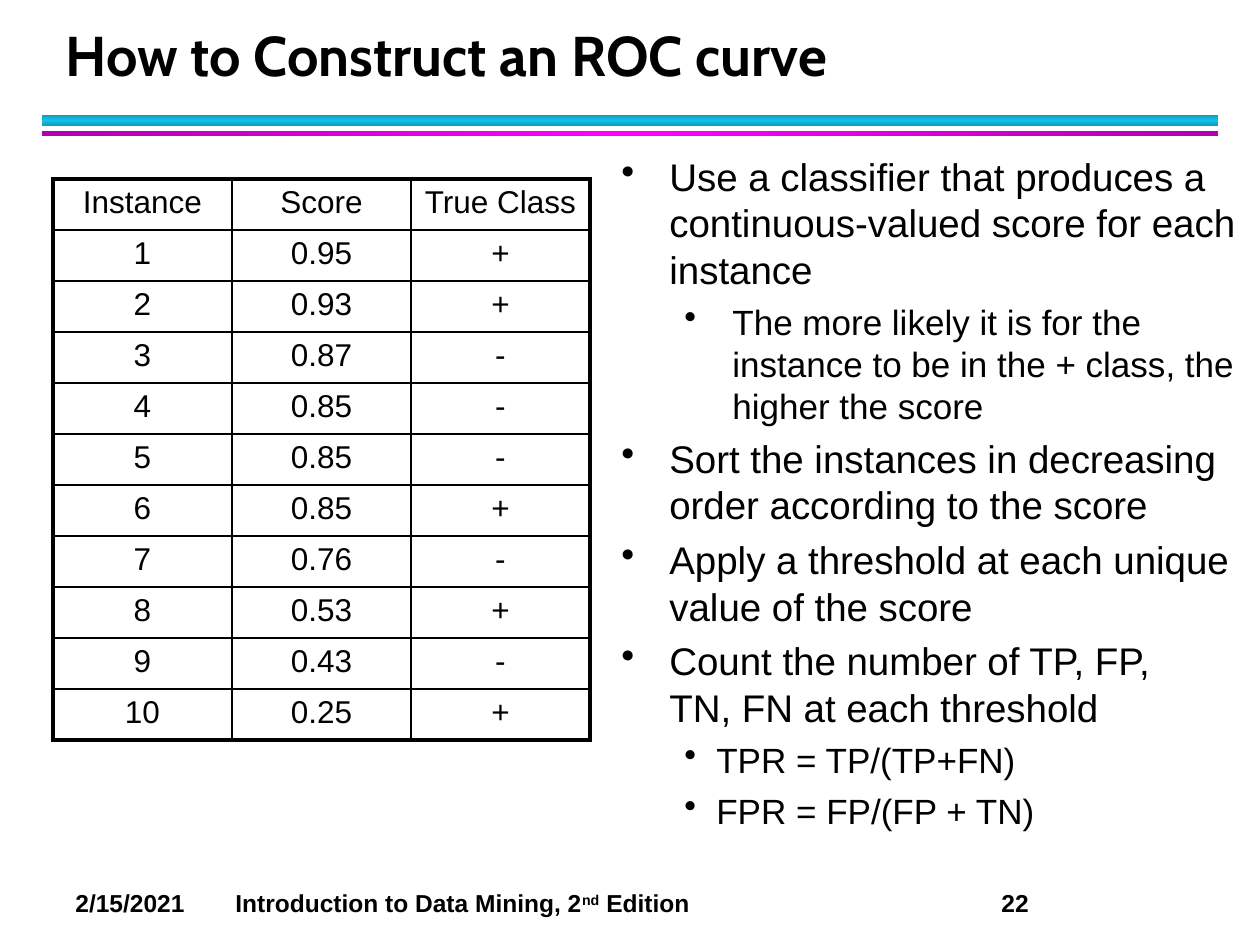
"""Build the slide on constructing an ROC curve."""
from lxml import etree
from pptx import Presentation
from pptx.dml.color import RGBColor
from pptx.enum.shapes import MSO_SHAPE
from pptx.enum.text import MSO_ANCHOR, PP_ALIGN
from pptx.oxml.ns import qn
from pptx.util import Emu, Pt

RECTANGLE = MSO_SHAPE.RECTANGLE
BOTTOM = MSO_ANCHOR.BOTTOM
CENTER = PP_ALIGN.CENTER
EMU_PER_PX = 914400 / 126

COLORS = {
    "ink": "000000",
    "paper": "FFFFFF",
    "cyan": "12C2E9",
    "cyan_edge": "0E9BBA",
    "magenta": "FF00FF",
    "magenta_edge": "B200B2",
}
HEADERS = ("Instance", "Score", "True Class")
SCORES = ("0.95", "0.93", "0.87", "0.85", "0.85", "0.85", "0.76", "0.53", "0.43", "0.25")
CLASSES = "++---+-+-+"
BULLETS = (
    (0, 48, 48, "Use a classifier that produces a continuous-valued score for each instance"),
    (1, 111, 48, "The more likely it is for the instance to be in the + class, the higher the score"),
    (0, 48, 48, "Sort the instances in decreasing order according to the score"),
    (0, 48, 48, "Apply a threshold at each unique value of the score"),
    (0, 48, 48, "Count the number of TP, FP,\vTN, FN at each threshold"),
    (1, 95, 32, "TPR = TP/(TP+FN)"),
    (1, 95, 32, "FPR = FP/(FP + TN)"),
)
LEVEL_SIZES = (22, 20)


def px(length):
    return Emu(round(length * EMU_PER_PX))


def rgb(name):
    return RGBColor.from_string(COLORS[name])


def set_font(paragraph, size, name="Arial", bold=False):
    font = paragraph.font
    font.name, font.size, font.bold = name, Pt(size), bold
    font.color.rgb = rgb("ink")


def add_text_frame(slide, left, top, width, height):
    frame = slide.shapes.add_textbox(px(left), px(top), px(width), px(height)).text_frame
    frame.word_wrap = True
    return frame


def add_rule(slide, top, height, edge, middle, angle):
    rule = slide.shapes.add_shape(RECTANGLE, px(42), px(top), px(1176), px(height))
    rule.shadow.inherit = False
    rule.line.fill.background()
    rule.fill.gradient()
    rule.fill.gradient_angle = angle
    stops = rule.fill._fill._gradFill.find(qn("a:gsLst"))
    stops.clear()
    for position, color in ((0, edge), (50000, middle), (100000, edge)):
        stop = etree.SubElement(stops, qn("a:gs"), pos=str(position))
        etree.SubElement(stop, qn("a:srgbClr"), val=COLORS[color])


def add_title(slide, text):
    frame = add_text_frame(slide, 53, 21, 1142, 73)
    frame.vertical_anchor = BOTTOM
    title = frame.paragraphs[0]
    title.text = text
    title.line_spacing = Pt(36)
    set_font(title, 32, "Cabin", True)


def set_borders(cell, widths):
    properties = cell._tc.get_or_add_tcPr()
    for position, (side, width) in enumerate(widths.items()):
        line = etree.Element(qn(f"a:ln{side}"), w=str(Pt(width)))
        fill = etree.SubElement(line, qn("a:solidFill"))
        etree.SubElement(fill, qn("a:srgbClr"), val=COLORS["ink"])
        properties.insert(position, line)


def add_score_table(slide):
    rows = [HEADERS]
    for number, (score, label) in enumerate(zip(SCORES, CLASSES), 1):
        rows.append((str(number), score, label))
    last_row, last_column = len(rows) - 1, len(HEADERS) - 1
    table = slide.shapes.add_table(
        len(rows), len(HEADERS), px(53), px(179), px(179 * len(HEADERS)), px(51 * len(rows))
    ).table
    for column in table.columns:
        column.width = px(179)
    for r, values in enumerate(rows):
        table.rows[r].height = px(51)
        for c, value in enumerate(values):
            cell = table.cell(r, c)
            cell.fill.solid()
            cell.fill.fore_color.rgb = rgb("paper")
            outer = {"L": c == 0, "R": c == last_column, "T": r == 0, "B": r == last_row}
            set_borders(cell, {side: 2.25 if edge else 1 for side, edge in outer.items()})
            entry = cell.text_frame.paragraphs[0]
            entry.text = value
            entry.alignment = CENTER
            set_font(entry, 18)


def add_bullets(slide):
    frame = add_text_frame(slide, 609, 147, 640, 698)
    for index, (level, margin, hang, text) in enumerate(BULLETS):
        step = frame.add_paragraph() if index else frame.paragraphs[0]
        step.text = text
        step.level = level
        step.space_before = Pt(5)
        set_font(step, LEVEL_SIZES[level])
        properties = step._p.get_or_add_pPr()
        properties.set("marL", str(px(margin)))
        properties.set("indent", str(px(-hang)))
        bullet = etree.Element(qn("a:buChar"), char="•")
        properties.find(qn("a:spcBef")).addnext(bullet)


def add_footer(slide):
    footer = add_text_frame(slide, 63, 882, 1176, 43).paragraphs[0]
    set_font(footer, 14, bold=True)
    tabs = etree.Element(qn("a:tabLst"))
    for position in (160, 926):
        etree.SubElement(tabs, qn("a:tab"), pos=str(px(position)), algn="l")
    footer._p.get_or_add_pPr().insert(0, tabs)
    for text in ("2/15/2021\tIntroduction to Data Mining, 2", "nd", " Edition\t22"):
        run = footer.add_run()
        run.text = text
        if text == "nd":
            run.font._element.set("baseline", "30000")


def main():
    presentation = Presentation()
    presentation.slide_width, presentation.slide_height = px(1260), px(945)
    slide = presentation.slides.add_slide(presentation.slide_layouts[6])
    add_rule(slide, 115, 11, "cyan_edge", "cyan", 90)
    add_rule(slide, 131, 5, "magenta_edge", "magenta", 0)
    add_footer(slide)
    add_title(slide, "How to Construct an ROC curve")
    add_score_table(slide)
    add_bullets(slide)
    presentation.save("out.pptx")


if __name__ == "__main__":
    main()
